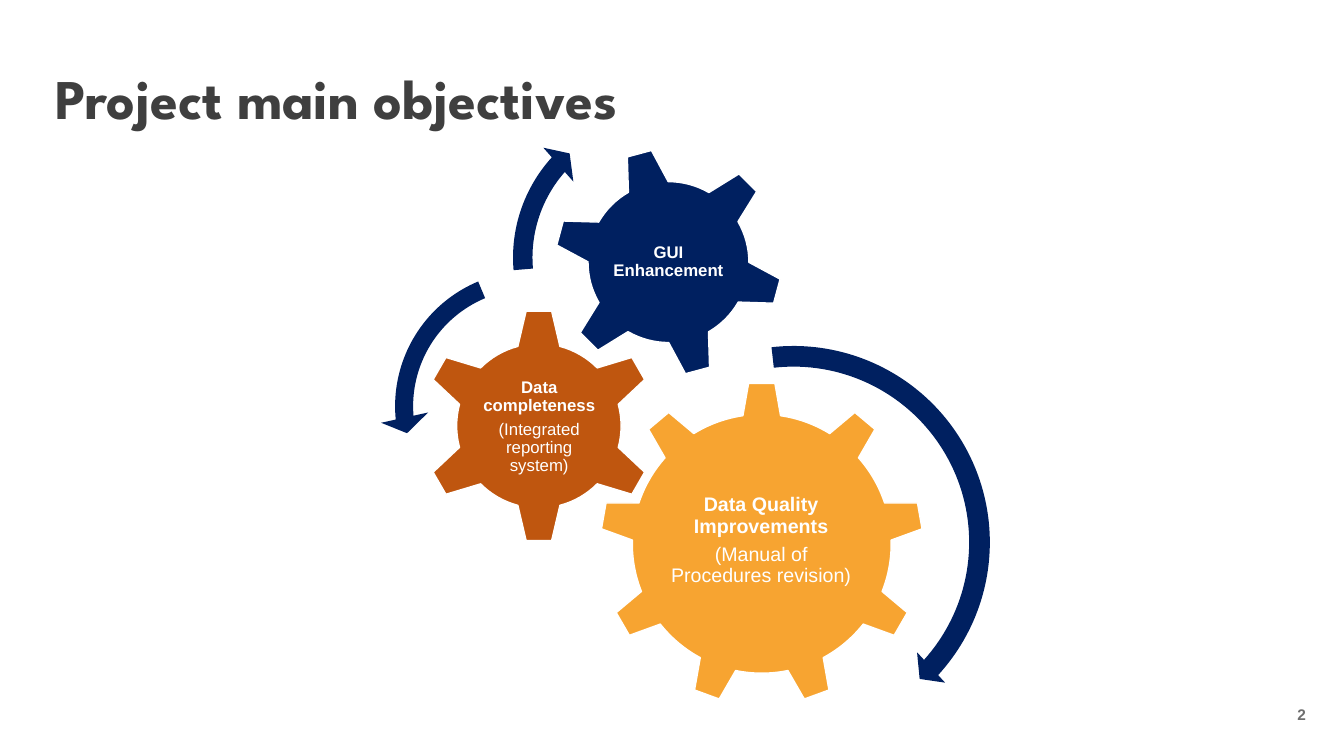
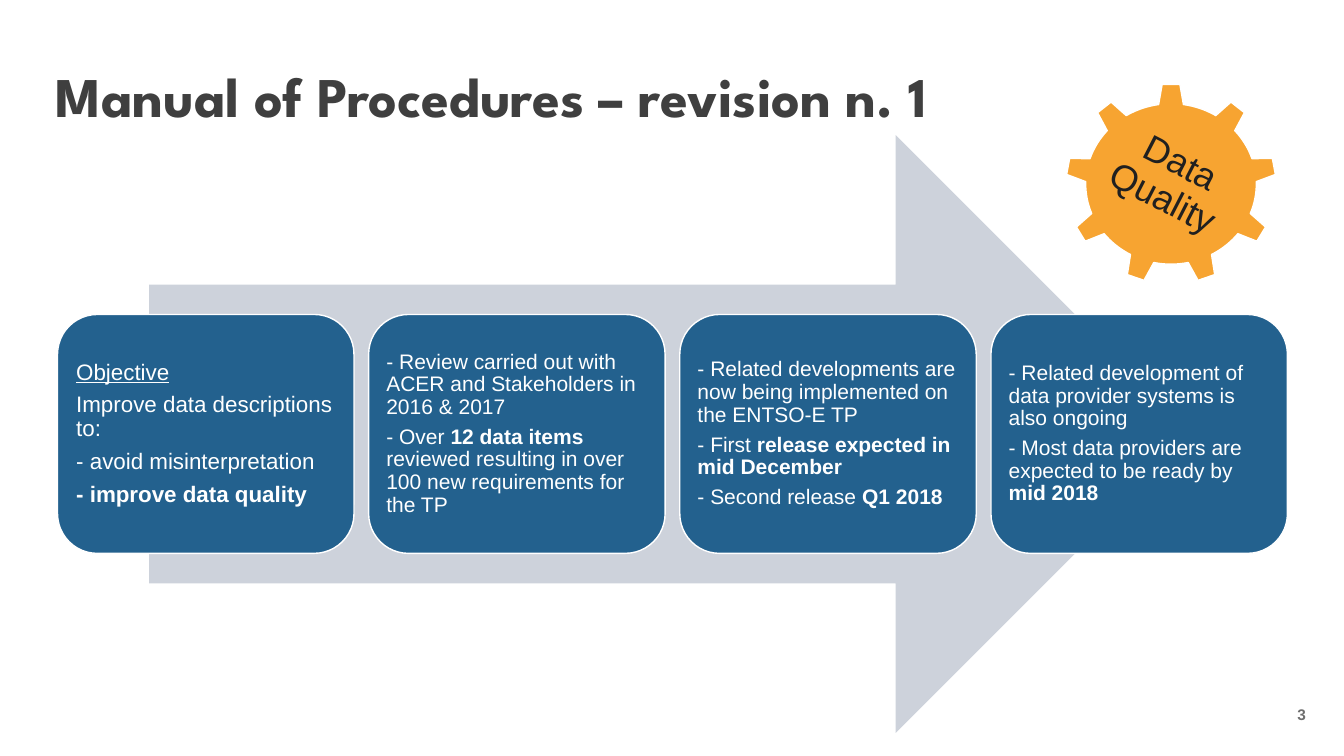
from dataclasses import dataclass

from pptx import Presentation
from pptx.dml.color import RGBColor
from pptx.enum.shapes import MSO_SHAPE
from pptx.enum.text import MSO_ANCHOR, MSO_AUTO_SIZE, PP_ALIGN
from pptx.util import Inches, Pt


@dataclass(frozen=True)
class Theme:
    navy: str = "002060"
    blue: str = "23618E"
    amber: str = "F7A431"
    rust: str = "BF560F"
    mist: str = "CDD2DB"
    white: str = "FFFFFF"
    ink: str = "202020"
    title_ink: str = "3F3F3F"
    number_ink: str = "6F6F6F"
    title_font: str = "League Spartan"
    text_font: str = "Arial"
    title_size: int = 40
    badge_size: int = 26
    lead_card_size: int = 16
    card_size: int = 15
    large_gear_size: int = 14
    small_gear_size: int = 12
    number_size: int = 11


theme = Theme()
deck = Presentation()
deck.slide_width, deck.slide_height = Inches(13.33), Inches(7.5)
COLUMN, ROW = deck.slide_width / 100, deck.slide_height / 100


def add(page, kind, at, fill=None, outline=None):
    """Add a shape, or a text box if kind is None; at is in percent of the slide."""
    left, top, width, height = at
    frame = [round(n) for n in (left * COLUMN, top * ROW, width * COLUMN, height * ROW)]
    if kind is None:
        return page.shapes.add_textbox(*frame)
    shape = page.shapes.add_shape(kind, *frame)
    shape.shadow.inherit = False
    shape.fill.solid()
    shape.fill.fore_color.rgb = RGBColor.from_string(fill)
    if outline:
        shape.line.color.rgb = RGBColor.from_string(outline)
        shape.line.width = Pt(1)
    else:
        shape.line.fill.background()
    return shape


def write(box, paragraphs, size, color, inset=None, align=PP_ALIGN.LEFT,
          spacing=0.9, font=theme.text_font):
    """Fill a box with paragraphs of (text, style) spans; styles are b and u."""
    frame = box.text_frame
    frame.word_wrap = True
    frame.auto_size = MSO_AUTO_SIZE.NONE
    frame.vertical_anchor = MSO_ANCHOR.MIDDLE
    if inset is not None:
        frame.margin_left = frame.margin_right = Inches(inset)
        frame.margin_top = frame.margin_bottom = Inches(inset)
    for index, spans in enumerate(paragraphs):
        para = frame.add_paragraph() if index else frame.paragraphs[0]
        para.alignment = align
        para.line_spacing = spacing
        para.space_before = Pt(0)
        para.space_after = Pt(round(0.35 * size))
        for text, style in spans:
            span = para.add_run()
            span.text = text
            span.font.name = font
            span.font.size = Pt(size)
            span.font.color.rgb = RGBColor.from_string(color)
            span.font.bold = "b" in style
            span.font.underline = "u" in style


# Shared title place, set on the layout
layout = deck.slide_layouts[5]
layout_title = layout.placeholders[0]
layout_title.left, layout_title.width = round(3.38 * COLUMN), round(91.52 * COLUMN)
layout_title.height = round(10.13 * ROW)

# Pages with title and number
pages = []
for number, heading, top, spacing in [
    (2, "Project main objectives", 5.87, 1.0),
    (3, "Manual of Procedures – revision n. 1", 6.67, 0.9),
]:
    page = deck.slides.add_slide(layout)
    title = page.shapes.title
    title.left, title.width, title.height = (
        layout_title.left, layout_title.width, layout_title.height)
    title.top = round(top * ROW)
    write(title, [[(heading, "b")]], theme.title_size, theme.title_ink,
          spacing=spacing, font=theme.title_font)
    title.text_frame.vertical_anchor = MSO_ANCHOR.TOP
    title.text_frame.margin_top = Inches(0.19)
    number_box = add(page, None, (95.8, 92.13, 3.68, 4.67))
    write(number_box, [[(str(number), "b")]], theme.number_size, theme.number_ink,
          spacing=1.0)
    number_box.text_frame.paragraphs[0].space_after = Pt(0)
    pages.append(page)
objectives, manual = pages

# Objectives: three interlocking gears with labels
for kind, at, turn, fill, label_at, size, label in [
    (MSO_SHAPE.GEAR_9, (44.64, 50.53, 24.08, 42.8), 0, theme.amber,
     (49.44, 60.53, 14.4, 22), theme.large_gear_size,
     [[("Data Quality Improvements", "b")], [("(Manual of Procedures revision)", "")]]),
    (MSO_SHAPE.GEAR_6, (31.36, 40.8, 17.48, 31.07), 0, theme.rust,
     (35.78, 48.8, 8.7, 15.33), theme.small_gear_size,
     [[("Data completeness", "b")], [("(Integrated reporting system)", "")]]),
    (MSO_SHAPE.GEAR_6, (41.19, 19.47, 17.1, 30.4), 345, theme.navy,
     (44.94, 26.13, 9.6, 17.07), theme.small_gear_size,
     [[("GUI Enhancement", "b")]]),
]:
    gear = add(objectives, kind, at, fill, theme.white)
    gear.rotation = turn
    write(add(objectives, None, label_at), label, size, theme.white, 0.02, PP_ALIGN.CENTER)

# Objectives: arrows showing how the gears turn
for kind, at, bends in [
    (MSO_SHAPE.CIRCULAR_ARROW, (43.66, 44.4, 30.76, 54.67),
     (0.05, 2.99, 25.38, 158.15, 0.05)),
    (MSO_SHAPE.LEFT_CIRCULAR_ARROW, (28.28, 33.87, 22.36, 39.73),
     (0.06, 4.3, 104.89, 148.38, 0.08)),
    (MSO_SHAPE.CIRCULAR_ARROW, (37.21, 12.67, 24.08, 42.8),
     (0.06, 3.94, 133.14, 105.08, 0.07)),
]:
    turning = add(objectives, kind, at, theme.navy)
    for index, bend in enumerate(bends):
        turning.adjustments[index] = bend

# Manual: process arrow behind four cards
add(manual, MSO_SHAPE.RIGHT_ARROW, (11.1, 17.87, 77.79, 79.07), theme.mist)
CARD_LEFT, CARD_STEP, CARD_WIDTH = 4.28, 23.15, 22.06
cards = [
    [[("Objective", "u")],
     [("Improve data descriptions to:", "")],
     [("- avoid misinterpretation", "")],
     [("- improve data quality", "b")]],
    [[("- Review carried out with ACER and Stakeholders in 2016 & 2017", "")],
     [("- Over ", ""), ("12 data items ", "b"),
      ("reviewed resulting in over 100 new requirements for the TP", "")]],
    [[("- Related developments are now being implemented on the ENTSO-E TP", "")],
     [("- First ", ""), ("release expected in mid December", "b")],
     [("- Second release ", ""), ("Q1 2018", "b")]],
    [[("- Related development of data provider systems is also ongoing", "")],
     [("- Most data providers are expected to be ready by ", ""), ("mid 2018", "b")]],
]
for index, paragraphs in enumerate(cards):
    card = add(manual, MSO_SHAPE.ROUNDED_RECTANGLE,
               (CARD_LEFT + index * CARD_STEP, 41.6, CARD_WIDTH, 31.6),
               theme.blue, theme.white)
    size = theme.card_size if index else theme.lead_card_size
    write(card, paragraphs, size, theme.white, 0.06 if index else 0.07)

# Manual: tilted gear badge
add(manual, MSO_SHAPE.GEAR_9, (79.29, 11.07, 15.68, 26.53), theme.amber, theme.white)
badge = add(manual, None, (82.45, 17.2, 9.38, 13.6))
badge.rotation = 27.2
write(badge, [[("Data Quality", "")]], theme.badge_size, theme.ink, 0.04, PP_ALIGN.CENTER)

deck.save("out.pptx")
